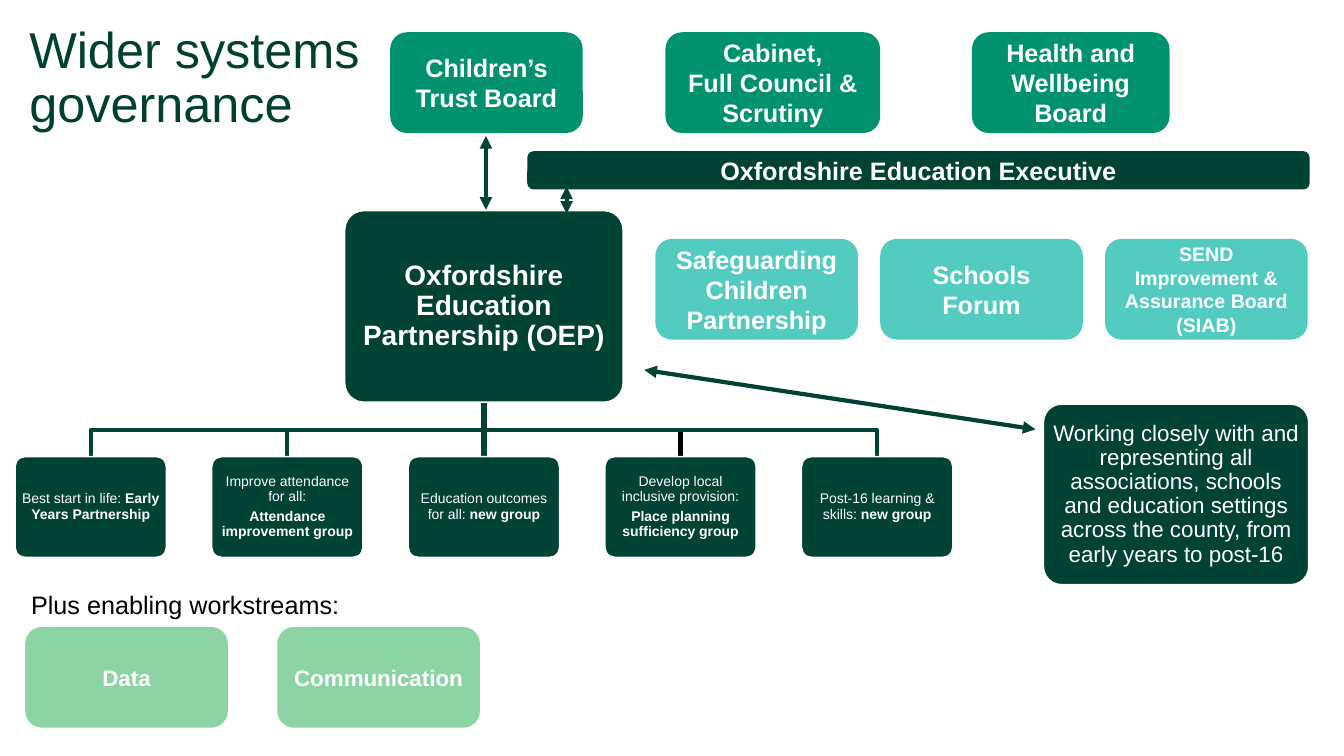
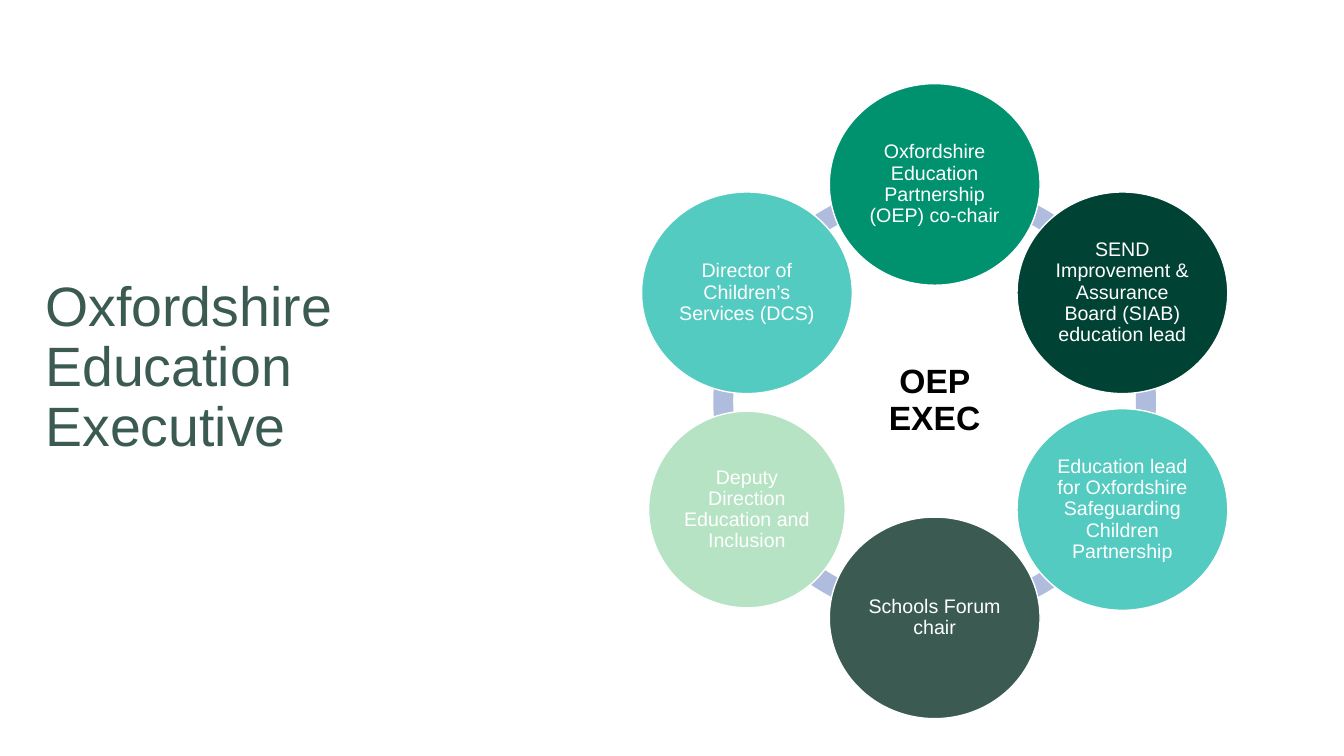
"""Build two slides on the governance of the Oxfordshire education system."""
from math import cos, radians, sin

from lxml.etree import SubElement
from pptx import Presentation
from pptx.dml.color import RGBColor
from pptx.enum.shapes import MSO_CONNECTOR as Connector, MSO_SHAPE as Preset
from pptx.enum.text import MSO_ANCHOR as Anchor, MSO_AUTO_SIZE as AutoSize, PP_ALIGN as Align
from pptx.oxml.ns import qn
from pptx.util import Inches, Pt

FONT = "Arial"
DEEP, GREEN, TEAL, MINT = "004233", "00926F", "53CBC1", "8CD4A4"
PALE, SLATE, LILAC, TITLE_GREEN = "B5E3C4", "3A5A52", "B0BCDE", "004031"
WHITE, BLACK = "FFFFFF", "000000"


def rgb(code):
    """Turn a hex string into a colour."""
    return RGBColor.from_string(code)


def style_font(font, size, color, bold=False):
    """Give a font its face, size, colour and weight."""
    font.name = FONT
    font.size = Pt(size)
    font.bold = bold
    font.color.rgb = rgb(color)


def set_margins(frame, side, top):
    """Set equal side margins and equal top and bottom margins."""
    frame.margin_left = frame.margin_right = Inches(side)
    frame.margin_top = frame.margin_bottom = Inches(top)


def add_title(slide, text, box, size, color):
    """Place and format the title placeholder."""
    title = slide.shapes.title
    title.left, title.top, title.width, title.height = map(Inches, box)
    frame = title.text_frame
    frame.text = text
    frame.word_wrap = True
    frame.auto_size = AutoSize.NONE
    frame.vertical_anchor = Anchor.MIDDLE
    paragraph = frame.paragraphs[0]
    paragraph.alignment = Align.LEFT
    paragraph.line_spacing = 0.9
    style_font(paragraph.runs[0].font, size, color)


def add_shape(slide, preset, box, fill, outline=None):
    """Add a flat preset shape, with a thin outline if one is given."""
    shape = slide.shapes.add_shape(preset, *map(Inches, box))
    shape.shadow.inherit = False
    shape.fill.solid()
    shape.fill.fore_color.rgb = rgb(fill)
    if outline:
        shape.line.color.rgb = rgb(outline)
        shape.line.width = Pt(1)
    else:
        shape.line.fill.background()
    return shape


def write_label(shape, paragraphs, size, color=WHITE, spacing=None):
    """Write centred paragraphs, each a list of (text, bold) pairs."""
    frame = shape.text_frame
    frame.word_wrap = True
    frame.vertical_anchor = Anchor.MIDDLE
    for index, parts in enumerate(paragraphs):
        paragraph = frame.add_paragraph() if index else frame.paragraphs[0]
        paragraph.alignment = Align.CENTER
        if spacing:
            paragraph.line_spacing = spacing
        if index:
            paragraph.space_before = Pt(size * 0.35)
        paragraph.text = parts[0][0]
        for text, _ in parts[1:]:
            paragraph.add_run().text = text
        if len(parts) == 1:
            for run in paragraph.runs:
                style_font(run.font, size, color, parts[0][1])
        else:
            for run, (_, bold) in zip(paragraph.runs, parts):
                style_font(run.font, size, color, bold)


def add_board(slide, text, box, fill, size=18):
    """Add a rounded box with a bold name."""
    board = add_shape(slide, Preset.ROUNDED_RECTANGLE, box, fill)
    write_label(board, [[(text, True)]], size)


def add_card(slide, paragraphs, box, size, margin):
    """Add a dark outlined card with tight corners."""
    card = add_shape(slide, Preset.ROUNDED_RECTANGLE, box, DEEP, WHITE)
    card.adjustments[0] = 0.1
    set_margins(card.text_frame, margin, margin)
    write_label(card, paragraphs, size, spacing=0.9)


def add_circle(slide, text, center, size, fill, color=WHITE, points=14, bold=False):
    """Add a labelled ellipse around a centre point."""
    (x, y), (width, height) = center, size
    box = (x - width / 2, y - height / 2, width, height)
    circle = add_shape(slide, Preset.OVAL, box, fill, WHITE)
    set_margins(circle.text_frame, 0.02, 0.02)
    write_label(circle, [[(text, bold)]], points, color, 0.9)


def add_link(slide, start, end, width=3, heads=True):
    """Draw a straight line, with arrowheads at both ends if asked."""
    link = slide.shapes.add_connector(Connector.STRAIGHT, *map(Inches, start + end))
    link.line.color.rgb = rgb(DEEP)
    link.line.width = Pt(width)
    properties = link.element.spPr
    if heads:
        for end_tag in ("a:headEnd", "a:tailEnd"):
            SubElement(properties.find(qn("a:ln")), qn(end_tag), type="triangle")
    SubElement(properties, qn("a:effectLst"))


def add_branch(slide, start, end, color):
    """Draw a right-angled branch from a parent down to a child."""
    (x1, y1), (x2, y2) = start, end
    middle = (y1 + y2) / 2
    outline = slide.shapes.build_freeform(Inches(x1), Inches(y1))
    corners = [(x1, middle), (x2, middle), (x2, y2)]
    outline.add_line_segments([(Inches(x), Inches(y)) for x, y in corners], close=False)
    branch = outline.convert_to_shape()
    branch.shadow.inherit = False
    branch.fill.background()
    branch.line.color.rgb = rgb(color)
    branch.line.width = Pt(3)


def add_workgroups(slide, hub_bottom):
    """Hang the five priority groups below the partnership."""
    groups = [
        ([[("Best start in life: ", False), ("Early Years Partnership", True)]], DEEP),
        ([[("Improve attendance for all:", False)], [("Attendance improvement group", True)]], DEEP),
        ([[("Education outcomes for all: ", False), ("new group", True)]], DEEP),
        ([[("Develop local inclusive provision:", False)],
          [("Place planning sufficiency group", True)]], BLACK),
        ([[("Post-16 learning & skills: ", False), ("new group", True)]], DEEP),
    ]
    top, width, step = 4.53, 1.5, 1.95
    for index, (paragraphs, color) in enumerate(groups):
        left = 0.15 + index * step
        child_top = (left + width / 2, top)
        if index == len(groups) // 2:
            add_link(slide, hub_bottom, child_top, 4.5, heads=False)
        else:
            add_branch(slide, hub_bottom, child_top, color)
        add_card(slide, paragraphs, (left, top, width, 1), 10, 0.04)


def add_heading(slide, text, box):
    """Add a plain line of text above a row of boxes."""
    heading = slide.shapes.add_textbox(*map(Inches, box))
    heading.text_frame.word_wrap = True
    heading.text_frame.text = text
    style_font(heading.text_frame.paragraphs[0].runs[0].font, 18, BLACK)


def build_governance(slide):
    """Show the boards, the partnership and its groups."""
    add_title(slide, "Wider systems governance", (0.19, 0.12, 4.24, 1.33), 36, TITLE_GREEN)
    add_card(slide, [[("Oxfordshire Education Partnership (OEP)", True)]],
             (3.42, 2.09, 2.76, 1.9), 20, 0.08)
    add_workgroups(slide, (4.8, 4))

    for text, left, width in [("Children’s Trust Board", 3.87, 1.91),
                              ("Cabinet,\vFull Council & Scrutiny", 6.6, 2.13),
                              ("Health and Wellbeing Board", 9.64, 1.96)]:
        add_board(slide, text, (left, 0.32, width, 1), GREEN)
    add_board(slide, "Oxfordshire Education Executive", (5.23, 1.5, 7.76, 0.38), DEEP)
    partners = [("Safeguarding Children Partnership", 18), ("Schools Forum", 18),
                ("SEND Improvement & Assurance Board (SIAB)", 14)]
    for index, (text, size) in enumerate(partners):
        add_board(slide, text, (6.5 + index * 2.23, 2.37, 2.01, 1), TEAL, size)

    add_heading(slide, "Plus enabling workstreams:", (0.21, 5.8, 6.75, 0.4))
    for index, text in enumerate(["Data", "Communication"]):
        add_board(slide, text, (0.25 + index * 2.5, 6.22, 2.01, 1), MINT, 16)

    add_card(slide, [[("Working closely with and representing all associations, schools and "
                       "education settings across the county, from early years to post-16",
                       False)]], (10.35, 4.01, 2.63, 1.79), 16, 0.04)
    for start, end in [((6.39, 3.67), (10.27, 4.26)), ((5.62, 2.12), (5.62, 1.85)),
                       ((4.82, 1.35), (4.82, 2.08))]:
        add_link(slide, start, end)


def build_executive(slide):
    """Show the members of the executive around a ring."""
    add_title(slide, "Oxfordshire Education Executive", (0.35, 2.93, 4.75, 1.45), 39.6, SLATE)
    x, y, radius, ring = 9.27, 3.98, 2.15, 4.39
    band = add_shape(slide, Preset.DONUT, (x - ring / 2, y - ring / 2, ring, ring), LILAC)
    band.adjustments[0] = 0.045
    add_circle(slide, "OEP EXEC", (x, y), (1.96, 1.96), WHITE, BLACK, 24, True)
    usual, small = (2.09, 2), (1.95, 1.95)
    members = [
        ("Oxfordshire Education Partnership (OEP) co-chair", GREEN, usual),
        ("SEND Improvement & Assurance Board (SIAB) education lead", DEEP, usual),
        ("Education lead for Oxfordshire Safeguarding Children Partnership", TEAL, usual),
        ("Schools Forum chair", SLATE, usual),
        ("Deputy Direction Education and Inclusion", PALE, small),
        ("Director of Children’s Services (DCS)", TEAL, usual),
    ]
    for index, (text, fill, size) in enumerate(members):
        angle = radians(index * 360 / len(members))
        center = (x + radius * sin(angle), y - radius * cos(angle))
        add_circle(slide, text, center, size, fill)


def main():
    """Build both slides and save the presentation."""
    deck = Presentation()
    deck.slide_width, deck.slide_height = Inches(13.33), Inches(7.5)
    title_only = deck.slide_layouts[5]
    for build in (build_governance, build_executive):
        build(deck.slides.add_slide(title_only))
    deck.save("out.pptx")


if __name__ == "__main__":
    main()
